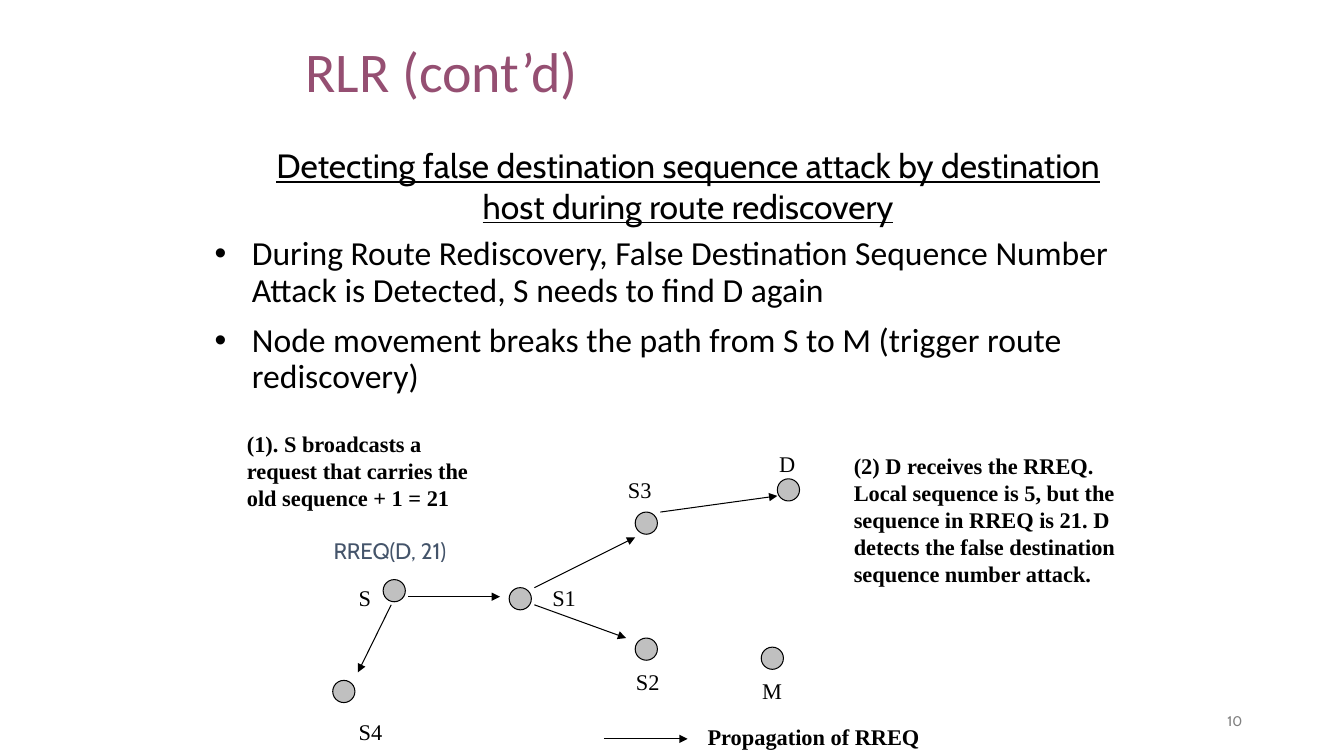
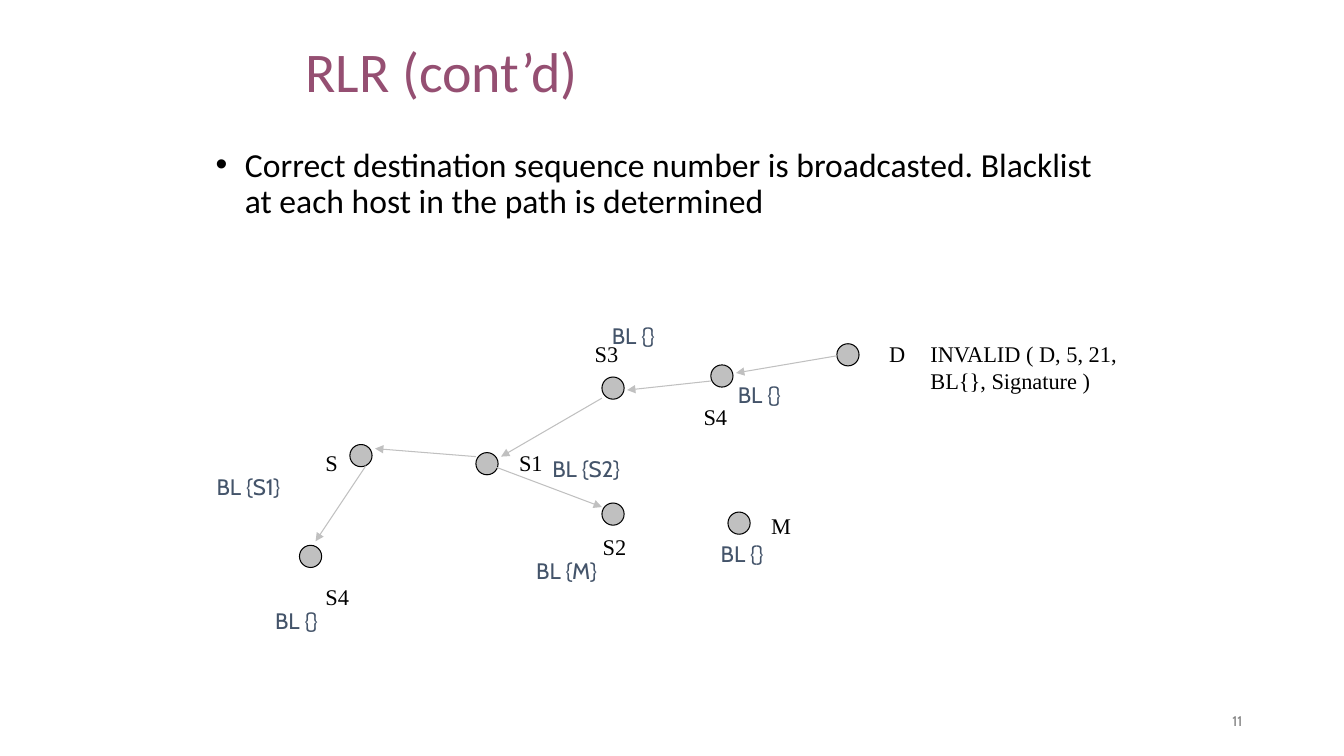
from lxml import etree
from pptx import Presentation
from pptx.dml.color import RGBColor
from pptx.enum import shapes, text
from pptx.oxml.ns import qn
from pptx.util import Inches, Pt

BLACK, PLUM, SLATE = "000000", "954F72", "44546A"
SILVER, GREY = "C0C0C0", "808080"
SANS, BODY, SERIF = "Calibri", "Cabin", "Times New Roman"
LEFT, CENTER = text.PP_ALIGN.LEFT, text.PP_ALIGN.CENTER
RIGHT, JUSTIFY = text.PP_ALIGN.RIGHT, text.PP_ALIGN.JUSTIFY
TOP, MIDDLE = text.MSO_ANCHOR.TOP, text.MSO_ANCHOR.MIDDLE
NODE = 0.22

# name, node x, node y, label x, label y
MESH = [
    ("S", 0.5, 1.33, 0.16, 1.33),
    ("S1", 1.75, 1.41, 2.08, 1.33),
    ("S2", 3, 1.91, 2.91, 2.16),
    ("S3", 3, 0.66, 2.83, 0.25),
    ("S4", 0, 2.33, 0.16, 2.66),
]


def rgb(value):
    return RGBColor.from_string(value)


def add_text(slide, box, paras, size=16, font=SERIF, color=BLACK, bold=False,
             underline=False, align=LEFT, anchor=TOP, spacing=None,
             before=0, bullet=None):
    sp = slide.shapes.add_textbox(*map(Inches, box))
    tf = sp.text_frame
    tf.word_wrap = True
    tf.vertical_anchor = anchor
    for i, line in enumerate([paras] if isinstance(paras, str) else paras):
        p = tf.add_paragraph() if i else tf.paragraphs[0]
        p.alignment = align
        p.space_before = Pt(before)
        if spacing:
            p.line_spacing = spacing
        if bullet:
            pPr = p._p.get_or_add_pPr()
            pPr.set("marL", str(Inches(bullet)))
            pPr.set("indent", str(-Inches(bullet)))
            etree.SubElement(pPr, qn("a:buFont")).set("typeface", "Arial")
            etree.SubElement(pPr, qn("a:buChar")).set("char", "•")
        r = p.add_run()
        r.text = line
        f = r.font
        f.size, f.name, f.bold, f.underline = Pt(size), font, bold, underline
        f.color.rgb = rgb(color)


def add_node(slide, x, y):
    sp = slide.shapes.add_shape(shapes.MSO_SHAPE.OVAL, Inches(x), Inches(y),
                                Inches(NODE), Inches(NODE))
    sp.shadow.inherit = False
    sp.fill.solid()
    sp.fill.fore_color.rgb = rgb(SILVER)
    sp.line.color.rgb = rgb(BLACK)
    sp.line.width = Pt(0.75)


def add_arrow(slide, x1, y1, x2, y2, color):
    cx = slide.shapes.add_connector(shapes.MSO_CONNECTOR.STRAIGHT,
                                    *map(Inches, (x1, y1, x2, y2)))
    cx.line.color.rgb = rgb(color)
    cx.line.width = Pt(0.75)
    etree.SubElement(cx.line._get_or_add_ln(), qn("a:tailEnd")).set("type", "triangle")
    etree.SubElement(cx._element.spPr, qn("a:effectLst"))


def add_network(slide, left, top, extra_nodes, arrows, arrow_color, tags):
    for name, x, y, label_x, label_y in MESH + extra_nodes:
        add_node(slide, left + x, top + y)
        add_text(slide, (left + label_x, top + label_y, 0.5, 0.25), name,
                 align=JUSTIFY)
    for x1, y1, x2, y2 in arrows:
        add_arrow(slide, left + x1, top + y1, left + x2, top + y2, arrow_color)
    for tag, x, y in tags:
        add_text(slide, (left + x, top + y, 1.67, 0.42), tag, font=BODY,
                 color=SLATE, anchor=MIDDLE)


def add_bullets(slide, box, paras, indent):
    add_text(slide, box, paras, size=24, font=SANS, spacing=0.9, before=10,
             bullet=indent)


def new_slide(prs, title, number):
    slide = prs.slides.add_slide(prs.slide_layouts[6])
    add_text(slide, (9.42, 6.95, 3, 0.4), str(number), size=10, font=BODY,
             color=GREY, align=RIGHT, anchor=MIDDLE)
    add_text(slide, (2.93, 0.31, 8.73, 0.85), title, size=40, font=SANS,
             color=PLUM, anchor=MIDDLE, spacing=0.9)
    return slide


def detection_slide(prs):
    s = new_slide(prs, "RLR (cont’d)", 10)
    add_bullets(s, (2.03, 2.3, 9.11, 1.89), [
        "During Route Rediscovery, False Destination Sequence Number Attack "
        "is Detected, S needs to find D again",
        "Node movement breaks the path from S to M (trigger route rediscovery)",
    ], 0.37)
    add_text(s, (2.37, 1.39, 8.91, 0.91),
             "Detecting false destination sequence attack by destination host "
             "during route rediscovery",
             size=24, font=BODY, underline=True, align=CENTER)
    add_network(
        s, 3.3, 4.42,
        [("D", 4.41, 0.33, 4.33, 0), ("M", 4.25, 2, 4.16, 2.25)],
        [(0.75, 1.5, 1.66, 1.5), (2, 1.41, 3, 0.91), (2, 1.58, 2.91, 1.91),
         (0.58, 1.58, 0.25, 2.25), (3.25, 0.66, 4.41, 0.5),
         (2.69, 2.91, 3.52, 2.91)],
        BLACK, [("RREQ(D, 21)", -0.09, 0.83)])
    for box, note in [
        ((2.35, 4.22, 2.58, 0.9),
         "(1). S broadcasts a request that carries the old sequence + 1 = 21"),
        ((8.37, 4.44, 2.83, 1.44),
         "(2) D receives the RREQ. Local sequence is 5, but the sequence in "
         "RREQ is 21. D detects the false destination sequence number attack."),
        ((6.92, 7.13, 3, 0.37), "Propagation of RREQ"),
    ]:
        add_text(s, box, note, bold=True)


def blacklist_slide(prs):
    s = new_slide(prs, "RLR (cont’d)", 11)
    add_bullets(s, (2.04, 1.42, 8.91, 1.61),
                "Correct destination sequence number is broadcasted. Blacklist "
                "at each host in the path is determined", 0.29)
    add_network(
        s, 2.97, 3.08,
        [("D", 5.33, 0.33, 5.75, 0.25), ("M", 4.25, 2, 4.58, 1.95),
         ("S4", 4.08, 0.54, 3.91, 0.87)],
        [(3, 0.87, 2, 1.45), (1.91, 1.54, 3, 1.95), (1.75, 1.45, 0.75, 1.37),
         (0.66, 1.54, 0.16, 2.29), (4.08, 0.7, 3.25, 0.79),
         (5.33, 0.45, 4.33, 0.62)],
        SILVER,
        [("BL {}", 3, 0.04), ("BL {S2}", 2.41, 1.36), ("BL {}", 4.08, 2.2),
         ("BL {M}", 2.25, 2.37), ("BL {S1}", -0.92, 1.54),
         ("BL {}", -0.34, 2.87), ("BL {}", 4.25, 0.62)])
    add_text(s, (9.13, 3.33, 2.17, 0.64), "INVALID ( D, 5, 21, BL{}, Signature )")


def main():
    prs = Presentation()
    prs.slide_width, prs.slide_height = Inches(13.33), Inches(7.5)
    detection_slide(prs)
    blacklist_slide(prs)
    prs.save("out.pptx")


if __name__ == "__main__":
    main()
